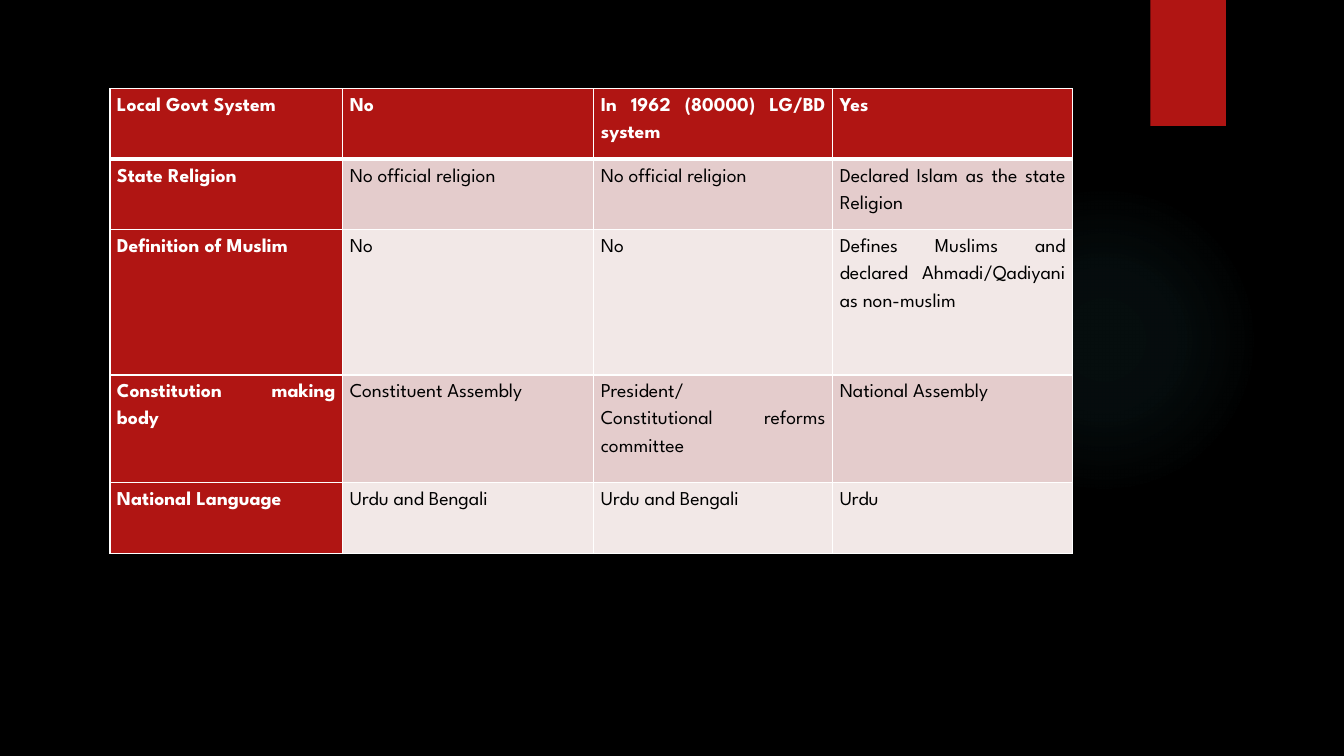
"""Build a slide with a table comparing constitutional features."""
from lxml import etree
from pptx import Presentation
from pptx.dml.color import RGBColor
from pptx.enum.shapes import MSO_SHAPE
from pptx.enum.text import PP_ALIGN
from pptx.oxml import parse_xml
from pptx.oxml.ns import nsdecls, qn
from pptx.util import Inches, Pt

ELLIPSE = MSO_SHAPE.OVAL
RECTANGLE = MSO_SHAPE.RECTANGLE
JUSTIFY = PP_ALIGN.JUSTIFY

BLACK = RGBColor(0x00, 0x00, 0x00)
WHITE = RGBColor(0xFF, 0xFF, 0xFF)
RED = RGBColor(0xB0, 0x15, 0x13)
TEAL = RGBColor(0x50, 0xB9, 0xC1)
DARK_BAND = RGBColor(0xE4, 0xCC, 0xCC)
LIGHT_BAND = RGBColor(0xF2, 0xE8, 0xE7)

COLUMN_WIDTHS = (2.31, 2.49, 2.37, 2.38)
ROW_HEIGHTS = (0.7, 0.7, 1.44, 1.07, 0.7)
ROWS = (
    ("Local Govt System", "No", "In 1962 (80000) LG/BD system", "Yes"),
    ("State Religion", "No official religion", "No official religion",
     "Declared Islam as the state Religion"),
    ("Definition of Muslim", "No", "No",
     "Defines Muslims and declared Ahmadi/Qadiyani as non-muslim"),
    ("Constitution making body", "Constituent Assembly",
     "President/\nConstitutional reforms committee", "National Assembly"),
    ("National Language", "Urdu and Bengali", "Urdu and Bengali", "Urdu"),
)


def write_text(frame, text, *, font, size, color, bold=False, align=JUSTIFY, spacing=1.5):
    """Write one paragraph per line of text with a shared format."""
    frame.word_wrap = True
    for index, line in enumerate(text.split("\n")):
        para = frame.paragraphs[0] if index == 0 else frame.add_paragraph()
        para.alignment = align
        para.line_spacing = spacing
        span = para.add_run()
        span.text = line
        span.font.name = font
        span.font.size = Pt(size)
        span.font.bold = bold
        span.font.color.rgb = color


class SlideBuilder:
    """Hold the style and the current slide."""

    font = "League Spartan"
    size = 14

    def __init__(self, slide):
        """Set the slide and its black background."""
        self.slide = slide
        slide.background.fill.solid()
        slide.background.fill.fore_color.rgb = BLACK

    def shape(self, kind, left, top, width, height, fill):
        """Add a plain filled shape without a line."""
        shape = self.slide.shapes.add_shape(
            kind, Inches(left), Inches(top), Inches(width), Inches(height))
        shape.shadow.inherit = False
        shape.fill.solid()
        shape.fill.fore_color.rgb = fill
        shape.line.fill.background()
        return shape

    def glow(self, left, top, diameter, color, stops):
        """Add a circle that fades outward through (position, opacity) stops."""
        circle = self.shape(ELLIPSE, left, top, diameter, diameter, color)
        stop_xml = "".join(
            f'<a:gs pos="{position * 1000}"><a:srgbClr val="{color}">'
            f'<a:alpha val="{opacity * 1000}"/></a:srgbClr></a:gs>'
            for position, opacity in stops)
        gradient = parse_xml(
            f'<a:gradFill {nsdecls("a")} rotWithShape="1"><a:gsLst>{stop_xml}</a:gsLst>'
            '<a:path path="circle"><a:fillToRect l="50000" t="50000" r="50000" b="50000"/>'
            '</a:path></a:gradFill>')
        properties = circle.element.spPr
        properties.replace(properties.find(qn("a:solidFill")), gradient)

    def ribbon(self, left, top, width, height, color):
        """Add a rectangle with a soft shadow below it."""
        ribbon = self.shape(RECTANGLE, left, top, width, height, color)
        effects = ribbon.element.spPr.find(qn("a:effectLst"))
        effects.append(parse_xml(
            f'<a:outerShdw {nsdecls("a")} blurRad="{Pt(3)}" dist="{Pt(2)}" dir="5400000" '
            f'rotWithShape="0"><a:srgbClr val="{BLACK}"><a:alpha val="45000"/>'
            '</a:srgbClr></a:outerShdw>'))

    def borders(self, cell, color, **widths):
        """Draw cell borders, with a width in points for each side."""
        properties = cell._tc.get_or_add_tcPr()
        for side, width in widths.items():
            line = etree.SubElement(properties, qn(f"a:ln{side}"), w=str(Pt(width)))
            fill = etree.SubElement(line, qn("a:solidFill"))
            etree.SubElement(fill, qn("a:srgbClr"), val=str(color))

    def table(self, left, top, widths, heights, rows):
        """Add the table with a red header row, red first column and pink bands."""
        table = self.slide.shapes.add_table(
            len(rows), len(widths), Inches(left), Inches(top),
            Inches(sum(widths)), Inches(sum(heights))).table
        for column, width in zip(table.columns, widths):
            column.width = Inches(width)
        for row, height in zip(table.rows, heights):
            row.height = Inches(height)
        for row_index, texts in enumerate(rows):
            band = DARK_BAND if row_index % 2 else LIGHT_BAND
            for column_index, text in enumerate(texts):
                cell = table.cell(row_index, column_index)
                heading = row_index == 0 or column_index == 0
                self.borders(cell, WHITE, L=1, R=1,
                             T=3 if row_index == 1 else 1,
                             B=3 if row_index == 0 else 1)
                cell.fill.solid()
                cell.fill.fore_color.rgb = RED if heading else band
                cell.margin_left = cell.margin_right = Inches(0.07)
                cell.margin_top = cell.margin_bottom = 0
                write_text(cell.text_frame, text, font=self.font, size=self.size,
                           color=WHITE if heading else BLACK, bold=heading)


def main():
    """Build and save the deck."""
    deck = Presentation()
    deck.slide_width = Inches(13.33)
    deck.slide_height = Inches(7.5)
    page = SlideBuilder(deck.slides.add_slide(deck.slide_layouts[6]))
    page.glow(9.41, 1.83, 3.08, TEAL, ((0, 7), (36, 6), (69, 0)))
    page.ribbon(11.41, 0, 0.75, 1.25, RED)
    page.table(1.09, 0.88, COLUMN_WIDTHS, ROW_HEIGHTS, ROWS)
    deck.save("out.pptx")


if __name__ == "__main__":
    main()
